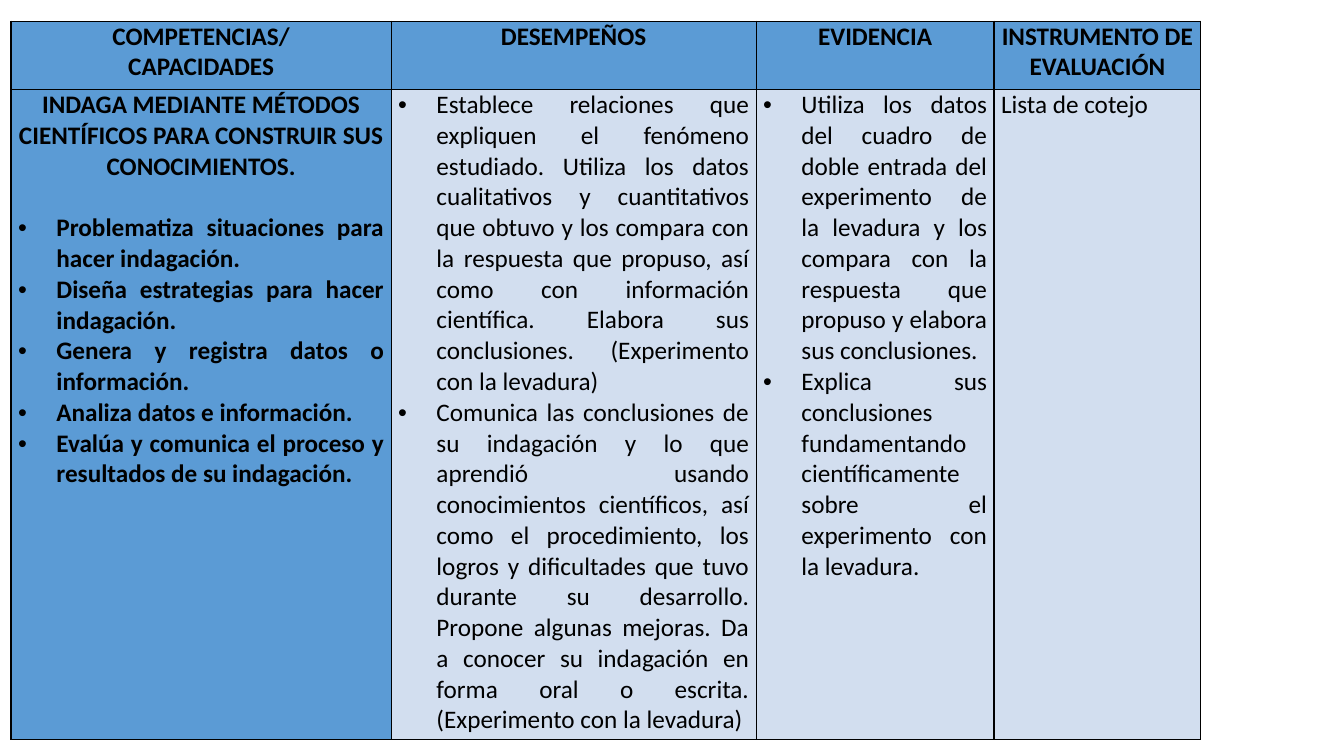
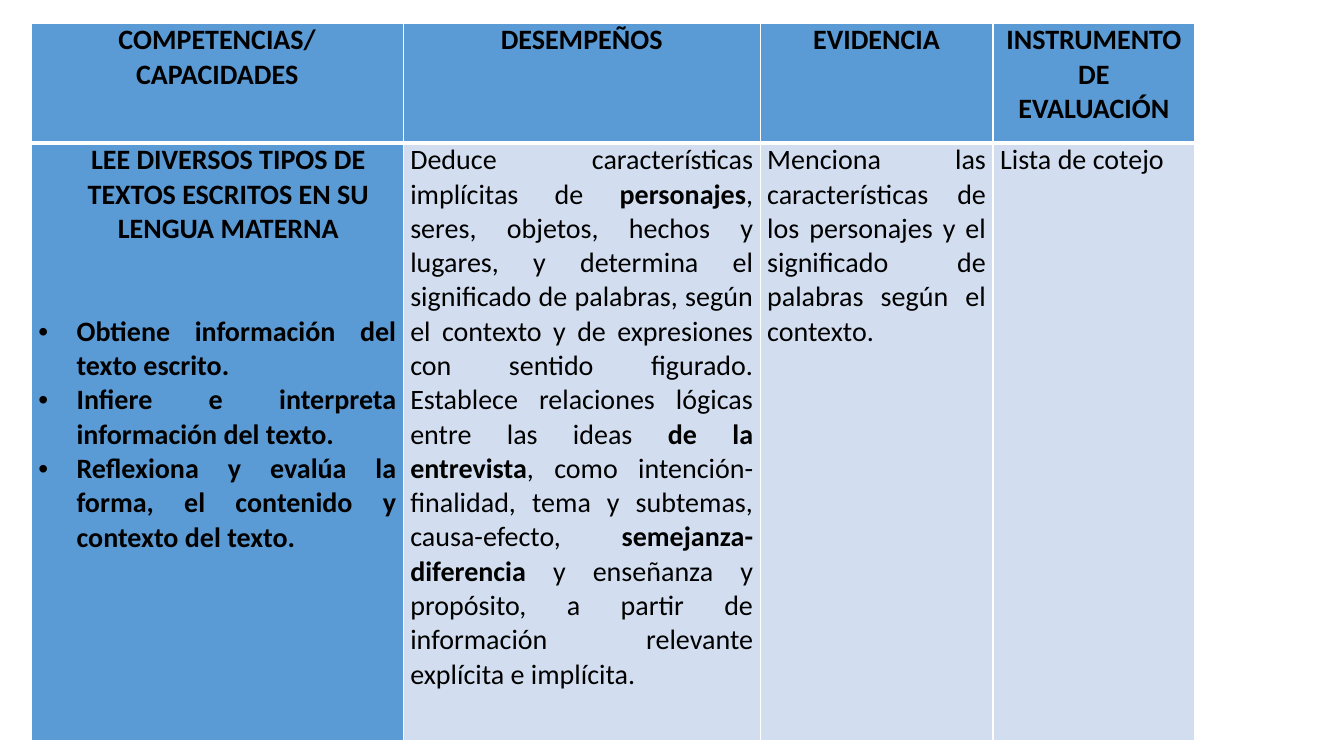
from dataclasses import dataclass

from lxml import etree
from pptx import Presentation
from pptx import util as u
from pptx.dml.color import RGBColor
from pptx.enum import text
from pptx.oxml.ns import qn

# Shared style
FONT = "Calibri"
BLACK, WHITE = "000000", "FFFFFF"
BLUE, PALE = "5B9BD5", "D2DEEF"
CELL_MARGIN, BULLET_INDENT = 0.07, 0.38
CENTER, JUSTIFY = text.PP_ALIGN.CENTER, text.PP_ALIGN.JUSTIFY
HEADERS = [["COMPETENCIAS/", "CAPACIDADES"], ["DESEMPEÑOS"],
           ["EVIDENCIA"], ["INSTRUMENTO DE EVALUACIÓN"]]


@dataclass
class Line:
    """One paragraph; words between ** marks switch weight."""
    words: str
    align: int = JUSTIFY
    bold: bool = False
    bullet: bool = False
    indent: float = 0
    before: float = 0


@dataclass
class Look:
    """Type size, border colour and border widths of one table."""
    size: int
    border: str
    header_rule: int = 1


def color(value):
    return RGBColor.from_string(value)


def title_line(words, indent=0):
    return Line(words, CENTER, bold=True, indent=indent)


def bullets(items, bold=False, before=0):
    return [Line(item, bold=bold, bullet=True, before=0 if i else before)
            for i, item in enumerate(items)]


def write_line(para, line, size):
    para.alignment = line.align
    if line.before:
        para.space_before = u.Pt(line.before)
    indent = BULLET_INDENT if line.bullet else line.indent
    props = para._p.get_or_add_pPr()
    props.set("marL", str(u.Inches(indent)))
    props.set("indent", str(-u.Inches(indent) if line.bullet else 0))
    if line.bullet:
        etree.SubElement(props, qn("a:buFont"), typeface="Arial")
        etree.SubElement(props, qn("a:buChar"), char="•")
    for i, words in enumerate(line.words.split("**")):
        span = para.add_run()
        span.text = words
        span.font.name, span.font.size = FONT, u.Pt(size)
        span.font.bold = line.bold != bool(i % 2)
        span.font.color.rgb = color(BLACK)


def draw_borders(cell, value, widths):
    props = cell._tc.get_or_add_tcPr()
    for side, width in zip("LRTB", widths):
        edge = etree.SubElement(props, qn(f"a:ln{side}"), w=str(u.Pt(width)))
        fill = etree.SubElement(edge, qn("a:solidFill"))
        etree.SubElement(fill, qn("a:srgbClr"), val=value)


def write_cell(cell, lines, fill, look, widths):
    draw_borders(cell, look.border, widths)
    cell.fill.solid()
    cell.fill.fore_color.rgb = color(fill)
    cell.margin_left = cell.margin_right = u.Inches(CELL_MARGIN)
    cell.margin_top = cell.margin_bottom = 0
    box = cell.text_frame
    for i, line in enumerate(lines):
        para = box.add_paragraph() if i else box.paragraphs[0]
        write_line(para, line, look.size)


def competence_slide(deck, place, columns, rows, body, look):
    """A slide with one table: header row above a row of content."""
    page = deck.slides.add_slide(deck.slide_layouts[6])
    left, top = place
    frame = page.shapes.add_table(
        len(rows), len(columns), u.Inches(left), u.Inches(top),
        u.Inches(sum(columns)), u.Inches(sum(rows)))
    table = frame.table
    table.first_row = table.horz_banding = False
    for column, width in zip(table.columns, columns):
        column.width = u.Inches(width)
    for row, height in zip(table.rows, rows):
        row.height = u.Inches(height)

    # Header row
    for i, words in enumerate(HEADERS):
        write_cell(table.cell(0, i), [title_line(w) for w in words], BLUE,
                   look, (1, 1, 1, look.header_rule))
    # Content row, with the first column in the header colour
    for i, lines in enumerate(body):
        write_cell(table.cell(1, i), lines, PALE if i else BLUE,
                   look, (1, 1, look.header_rule, 1))


INQUIRY = [
    [title_line("INDAGA MEDIANTE MÉTODOS CIENTÍFICOS PARA CONSTRUIR SUS "
                "CONOCIMIENTOS.")]
    + bullets(["Problematiza situaciones para hacer indagación.",
               "Diseña estrategias para hacer indagación.",
               "Genera y registra datos o información.",
               "Analiza datos e información.",
               "Evalúa y comunica el proceso y resultados de su indagación."],
              bold=True, before=22),
    bullets(["Establece relaciones que expliquen el fenómeno estudiado. "
             "Utiliza los datos cualitativos y cuantitativos que obtuvo y los "
             "compara con la respuesta que propuso, así como con información "
             "científica. Elabora sus conclusiones. (Experimento con la "
             "levadura)",
             "Comunica las conclusiones de su indagación y lo que aprendió "
             "usando conocimientos científicos, así como el procedimiento, "
             "los logros y dificultades que tuvo durante su desarrollo. "
             "Propone algunas mejoras. Da a conocer su indagación en forma "
             "oral o escrita. (Experimento con la levadura)"]),
    bullets(["Utiliza los datos del cuadro de doble entrada del experimento "
             "de la levadura y los compara con la respuesta que propuso y "
             "elabora sus conclusiones.",
             "Explica sus conclusiones fundamentando científicamente sobre el "
             "experimento con la levadura."]),
    [Line("Lista de cotejo")],
]

READING = [
    [title_line("LEE DIVERSOS TIPOS DE TEXTOS ESCRITOS EN SU LENGUA MATERNA",
                indent=0.22)]
    + bullets(["Obtiene información del texto escrito.",
               "Infiere e interpreta información del texto.",
               "Reflexiona y evalúa la forma, el contenido y contexto del "
               "texto."], bold=True, before=49),
    [Line("Deduce características implícitas de **personajes**, seres, "
          "objetos, hechos y lugares, y determina el significado de palabras, "
          "según el contexto y de expresiones con sentido figurado. Establece "
          "relaciones lógicas entre las ideas **de la entrevista**, como "
          "intención-finalidad, tema y subtemas, causa-efecto, "
          "**semejanza-diferencia** y enseñanza y propósito, a partir de "
          "información relevante explícita e implícita.")],
    [Line("Menciona las características de los personajes y el significado "
          "de palabras según el contexto.")],
    [Line("Lista de cotejo")],
]


def main():
    deck = Presentation()
    deck.slide_width, deck.slide_height = u.Inches(13.33), u.Inches(7.5)
    competence_slide(deck, (0.11, 0.21), (3.77, 3.62, 2.36, 2.05),
                     (0.68, 6.45), INQUIRY, Look(18, BLACK))
    competence_slide(deck, (0.31, 0.23), (3.69, 3.54, 2.31, 2),
                     (1.19, 5.93), READING, Look(20, WHITE, header_rule=3))
    deck.save("out.pptx")


if __name__ == "__main__":
    main()
